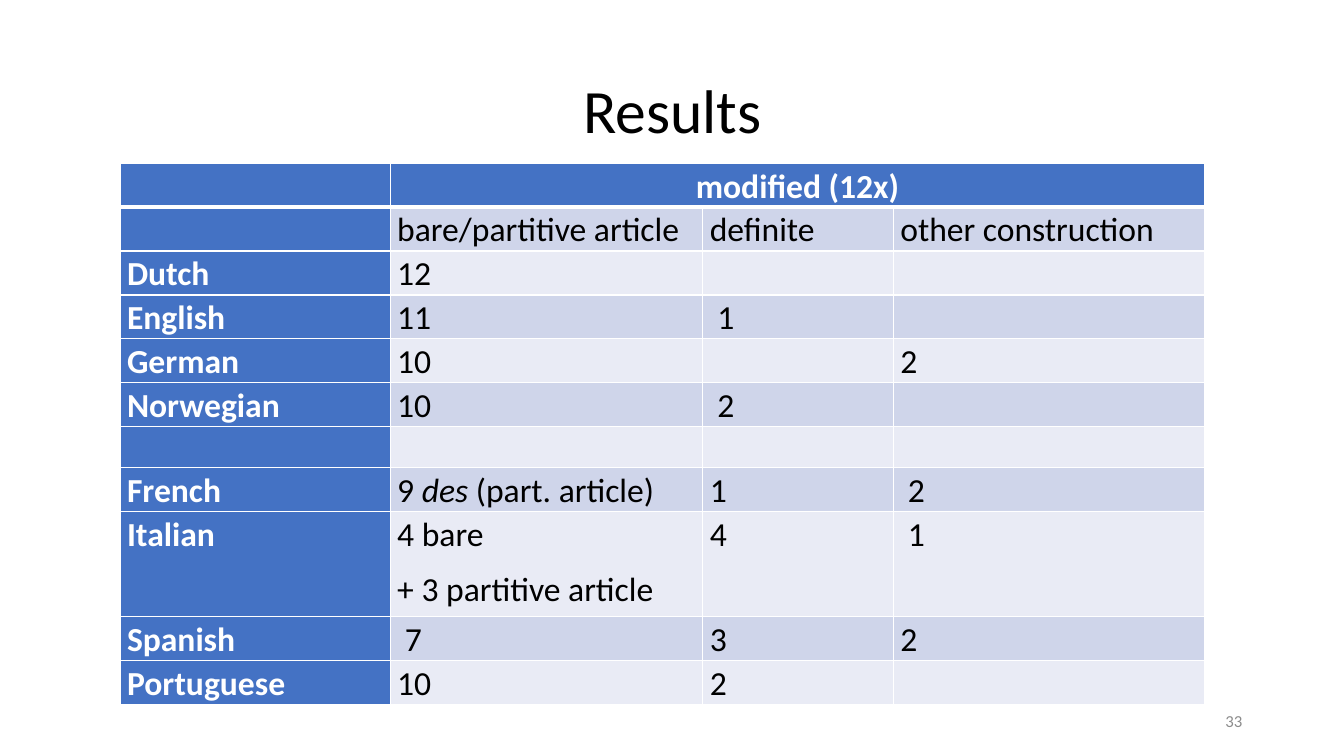
from lxml.etree import SubElement
from pptx import Presentation
from pptx.dml.color import RGBColor
from pptx.enum.text import MSO_ANCHOR, PP_ALIGN
from pptx.oxml.ns import qn
from pptx.util import Inches, Pt

TITLE = "Results"
PAGE_NUMBER = "33"
ROWS = [
    ["", "modified (12x)", "", ""],
    ["", "bare/partitive article", "definite", "other construction"],
    ["Dutch", "12", "", ""],
    ["English", "11", " 1", ""],
    ["German", "10", "", "2"],
    ["Norwegian", "10", " 2", ""],
    ["", "", "", ""],
    ["French", [["9 ", "des", " (part. article)"]], "1", " 2"],
    ["Italian", [["4 bare"], ["+ 3 partitive article"]], "4", " 1"],
    ["Spanish", " 7", "3", "2"],
    ["Portuguese", "10", "2", ""],
]
ITALIC_WORDS = {"des"}
COLUMN_WIDTHS = [2.68, 3.1, 1.89, 3.09]
ROW_HEIGHT = 0.39
TALL_ROW_HEIGHT = 1.04
TALL_ROW = 8

FONT = "Calibri"
WHITE = RGBColor(0xFF, 0xFF, 0xFF)
BLACK = RGBColor(0, 0, 0)
GREY = RGBColor(0x8C, 0x8C, 0x8C)
BLUE = RGBColor(0x44, 0x72, 0xC4)
BANDS = [RGBColor(0xE9, 0xEB, 0xF5), RGBColor(0xCF, 0xD5, 0xEA)]


def add_span(para, text, size, color, bold=False, italic=False):
    span = para.add_run()
    span.text = text
    font = span.font
    font.name, font.size, font.bold, font.italic = FONT, Pt(size), bold, italic
    font.color.rgb = color


def add_borders(cell, row):
    props = cell._tc.get_or_add_tcPr()
    for side in "LRTB":
        heavy = (row, side) in {(0, "B"), (1, "T")}
        line = SubElement(props, qn(f"a:ln{side}"), w=str(Pt(3 if heavy else 1)))
        fill = SubElement(line, qn("a:solidFill"))
        SubElement(fill, qn("a:srgbClr"), val=str(WHITE))


def fill_cell(cell, content, row, column):
    heading = row == 0 or column == 0
    add_borders(cell, row)
    cell.fill.solid()
    cell.fill.fore_color.rgb = BLUE if heading else BANDS[row % 2]
    cell.margin_left = cell.margin_right = Inches(0.07)
    cell.margin_top = cell.margin_bottom = 0
    lines = [[content]] if isinstance(content, str) else content
    frame = cell.text_frame
    for index, line in enumerate(lines):
        para = frame.add_paragraph() if index else frame.paragraphs[0]
        para.alignment = PP_ALIGN.CENTER if row == 0 else PP_ALIGN.LEFT
        para.line_spacing = 1.07
        para.space_after = Pt(8)
        for text in filter(None, line):
            add_span(para, text, 24, WHITE if heading else BLACK,
                     heading, text in ITALIC_WORDS)
        if not any(line):
            SubElement(para._p, qn("a:endParaRPr"), sz="2400")


def add_results_table(page):
    table = page.shapes.add_table(
        len(ROWS), len(COLUMN_WIDTHS), Inches(1.19), Inches(1.62),
        Inches(sum(COLUMN_WIDTHS)), Inches(ROW_HEIGHT * len(ROWS))).table
    for column, width in zip(table.columns, COLUMN_WIDTHS):
        column.width = Inches(width)
    for row, contents in enumerate(ROWS):
        height = TALL_ROW_HEIGHT if row == TALL_ROW else ROW_HEIGHT
        table.rows[row].height = Inches(height)
        for column, content in enumerate(contents):
            fill_cell(table.cell(row, column), content, row, column)
    table.cell(0, 1).merge(table.cell(0, 3))


def place(box, left, top, width, height):
    box.left, box.top = Inches(left), Inches(top)
    box.width, box.height = Inches(width), Inches(height)


def main():
    deck = Presentation()
    deck.slide_width, deck.slide_height = Inches(13.33), Inches(7.5)
    page = deck.slides.add_slide(deck.slide_layouts[5])

    title = page.shapes.title
    place(title, 0.92, 0.4, 11.5, 1.45)
    title.text_frame.vertical_anchor = MSO_ANCHOR.MIDDLE
    para = title.text_frame.paragraphs[0]
    para.alignment = PP_ALIGN.CENTER
    para.line_spacing = 0.9
    add_span(para, TITLE, 44, BLACK)

    add_results_table(page)

    number = page.shapes.add_textbox(
        Inches(9.42), Inches(6.95), Inches(3), Inches(0.4))
    number.text_frame.word_wrap = True
    number.text_frame.vertical_anchor = MSO_ANCHOR.MIDDLE
    para = number.text_frame.paragraphs[0]
    para.alignment = PP_ALIGN.RIGHT
    add_span(para, PAGE_NUMBER, 12, GREY)

    deck.save("out.pptx")


if __name__ == "__main__":
    main()
